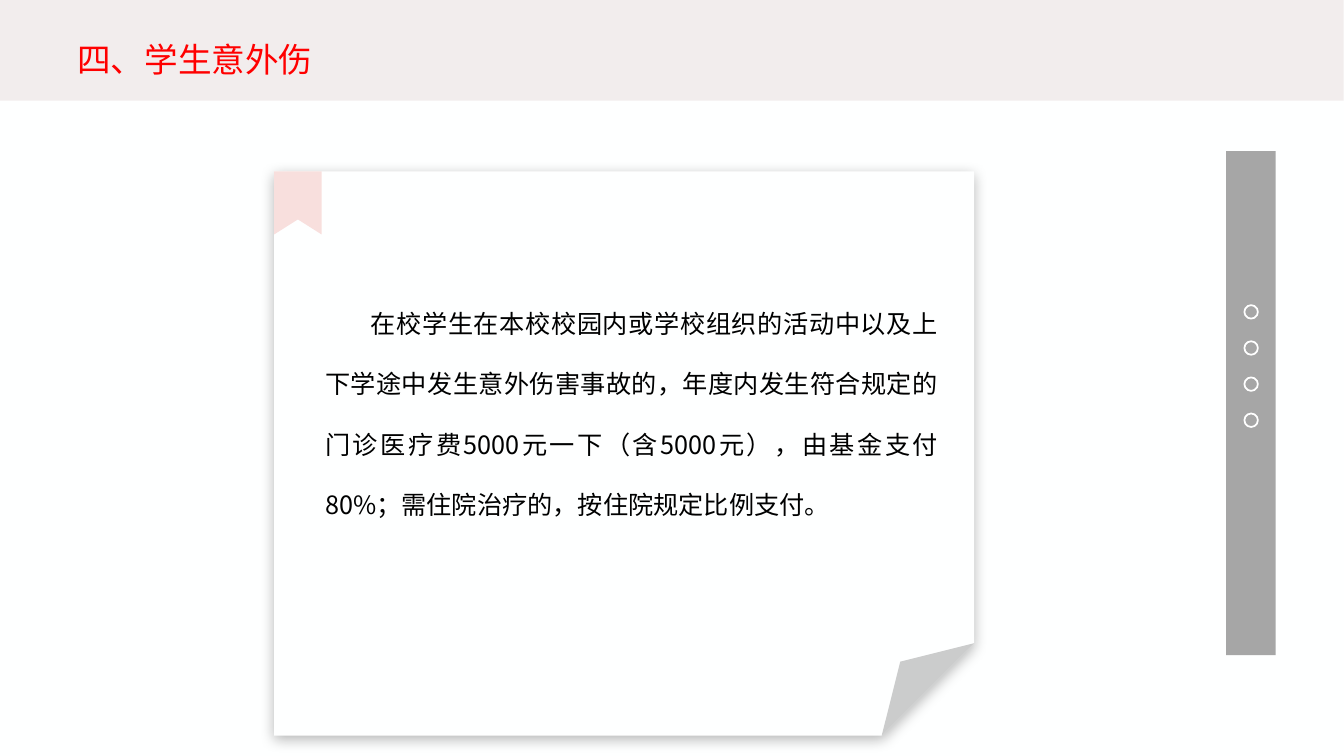
from lxml.etree import SubElement
from pptx import Presentation
from pptx.dml.color import RGBColor
from pptx.enum.shapes import MSO_SHAPE
from pptx.enum.text import MSO_ANCHOR, PP_ALIGN
from pptx.oxml.ns import qn
from pptx.util import Cm, Pt

FONT = "Noto Sans CJK SC"
COLORS = {
    "page": "FEFFFF",
    "header": "F2EDED",
    "sidebar": "A6A6A6",
    "dot": "FFFFFF",
    "bookmark": "F8DFDD",
    "title": "FF0000",
    "body": "000000",
    "shadow": "0D0D0D",
}
TITLE = "四、学生意外伤"
BODY = (
    "在校学生在本校校园内或学校组织的活动中以及上下学途中发生意外伤害事故的，"
    "年度内发生符合规定的门诊医疗费5000元一下（含5000元），由基金支付80%；"
    "需住院治疗的，按住院规定比例支付。"
)


def rgb(name):
    return RGBColor.from_string(COLORS[name])


def paint(sp, fill=None, line=None):
    sp.shadow.inherit = False
    if fill:
        sp.fill.solid()
        sp.fill.fore_color.rgb = rgb(fill)
    else:
        sp.fill.background()
    if line:
        sp.line.color.rgb = rgb(line)
        sp.line.width = Pt(1.25)
    else:
        sp.line.fill.background()


def add_block(s, kind, box, fill=None, line=None):
    sp = s.shapes.add_shape(kind, *map(Cm, box))
    paint(sp, fill, line)
    return sp


def add_outline(s, points, fill):
    pts = [(Cm(x), Cm(y)) for x, y in points]
    builder = s.shapes.build_freeform(*pts[0])
    builder.add_line_segments(pts[1:], close=True)
    paint(builder.convert_to_shape(), fill)


def set_fold(sp, share):
    geom = sp._element.spPr.find(qn("a:prstGeom"))
    guides = geom.find(qn("a:avLst"))
    if guides is None:
        guides = SubElement(geom, qn("a:avLst"))
    SubElement(guides, qn("a:gd"), name="adj", fmla=f"val {round(share * 100000)}")


def add_soft_shadow(sp):
    effects = sp._element.spPr.find(qn("a:effectLst"))
    shadow = SubElement(effects, qn("a:outerShdw"), blurRad=str(Pt(10)),
                        dist=str(Pt(3)), dir="5400000", algn="t", rotWithShape="0")
    color = SubElement(shadow, qn("a:srgbClr"), val=COLORS["shadow"])
    SubElement(color, qn("a:alpha"), val="30000")


def add_text(s, box, text, size, color, anchor, formats):
    tf = s.shapes.add_textbox(*map(Cm, box)).text_frame
    tf.word_wrap = True
    tf.vertical_anchor = anchor
    p = tf.paragraphs[0]
    for name, value in formats.items():
        setattr(p, name, value)
    r = p.add_run()
    r.text = text
    for name, value in {"size": Pt(size), "name": FONT}.items():
        setattr(r.font, name, value)
    r.font.color.rgb = rgb(color)
    rPr = r._r.get_or_add_rPr()
    rPr.set("lang", "zh-CN")
    SubElement(rPr, qn("a:ea"), typeface=FONT)
    return p


def main():
    prs = Presentation()
    prs.slide_width, prs.slide_height = Cm(33.88), Cm(19.05)
    s = prs.slides.add_slide(prs.slide_layouts[6])
    s.background.fill.solid()
    s.background.fill.fore_color.rgb = rgb("page")

    # Sidebar with its column of dots
    add_block(s, MSO_SHAPE.RECTANGLE, (30.91, 3.81, 1.25, 12.7), "sidebar")
    for i in range(4):
        add_block(s, MSO_SHAPE.OVAL, (31.37, 7.69 + 0.91 * i, 0.34, 0.34), line="dot")

    # Header
    add_block(s, MSO_SHAPE.RECTANGLE, (0, 0, 33.87, 2.54), "header")
    add_text(s, (1.7, 0.43, 30.48, 1.7), TITLE, 24, "title",
             MSO_ANCHOR.BOTTOM, {"line_spacing": 0.9})

    # Note card with bookmark
    left, top = 6.91, 4.32
    card = add_block(s, MSO_SHAPE.FOLDED_CORNER, (left, top, 17.65, 14.22), "page")
    set_fold(card, 0.164)
    add_soft_shadow(card)
    width, height, notch = 1.2, 1.59, 1.21
    add_outline(s, [(left, top), (left + width, top), (left + width, top + height),
                    (left + width / 2, top + notch), (left, top + height)], "bookmark")

    # Card text with a first-line indent
    p = add_text(s, (7.49, 6.88, 16.41, 7.85), BODY, 18, "body", MSO_ANCHOR.TOP,
                 {"alignment": PP_ALIGN.JUSTIFY, "line_spacing": 2.0,
                  "space_after": Pt(12)})
    pPr = p._p.get_or_add_pPr()
    pPr.set("marL", str(Cm(0.46)))
    pPr.set("indent", str(Cm(1.14)))

    prs.save("out.pptx")


if __name__ == "__main__":
    main()
